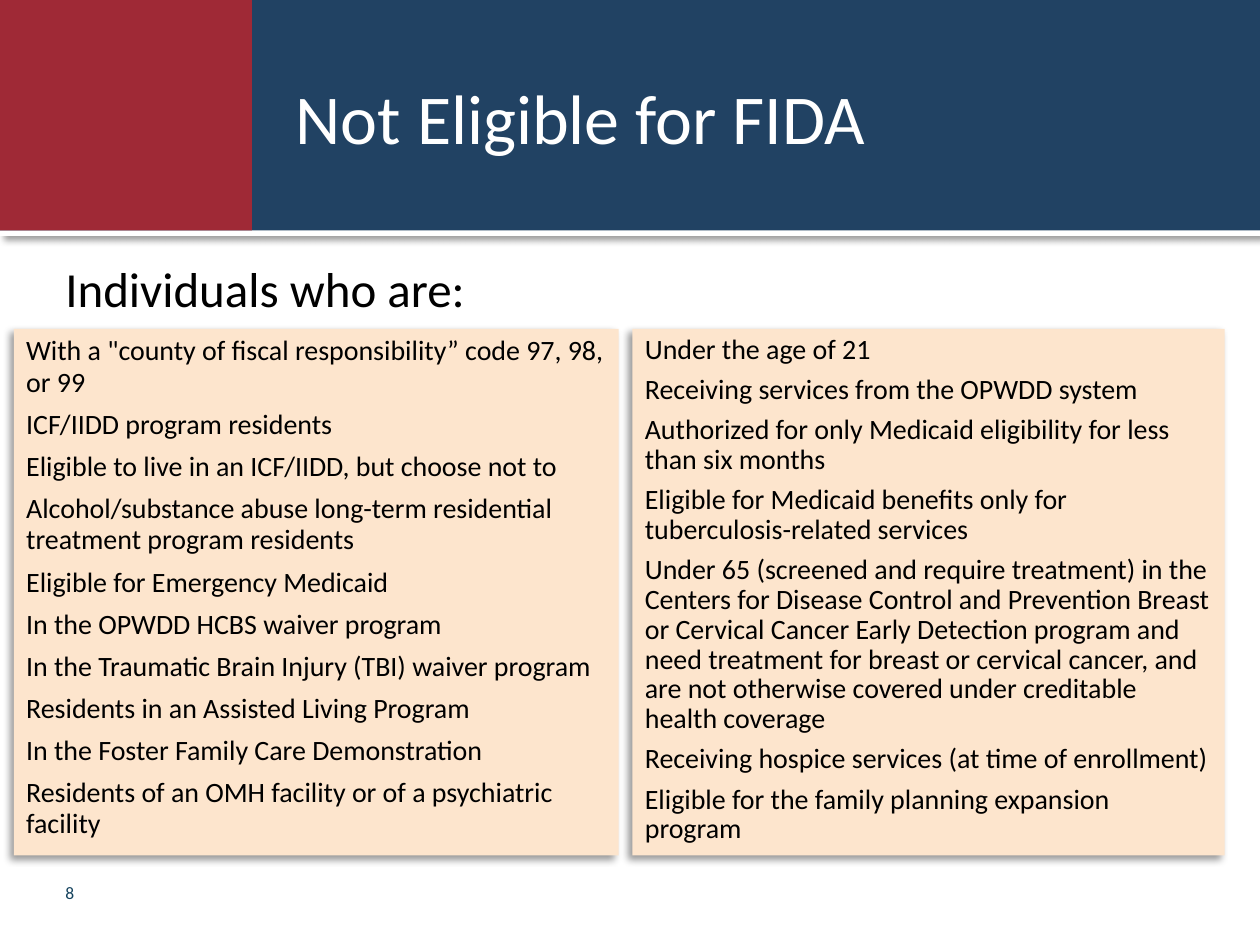
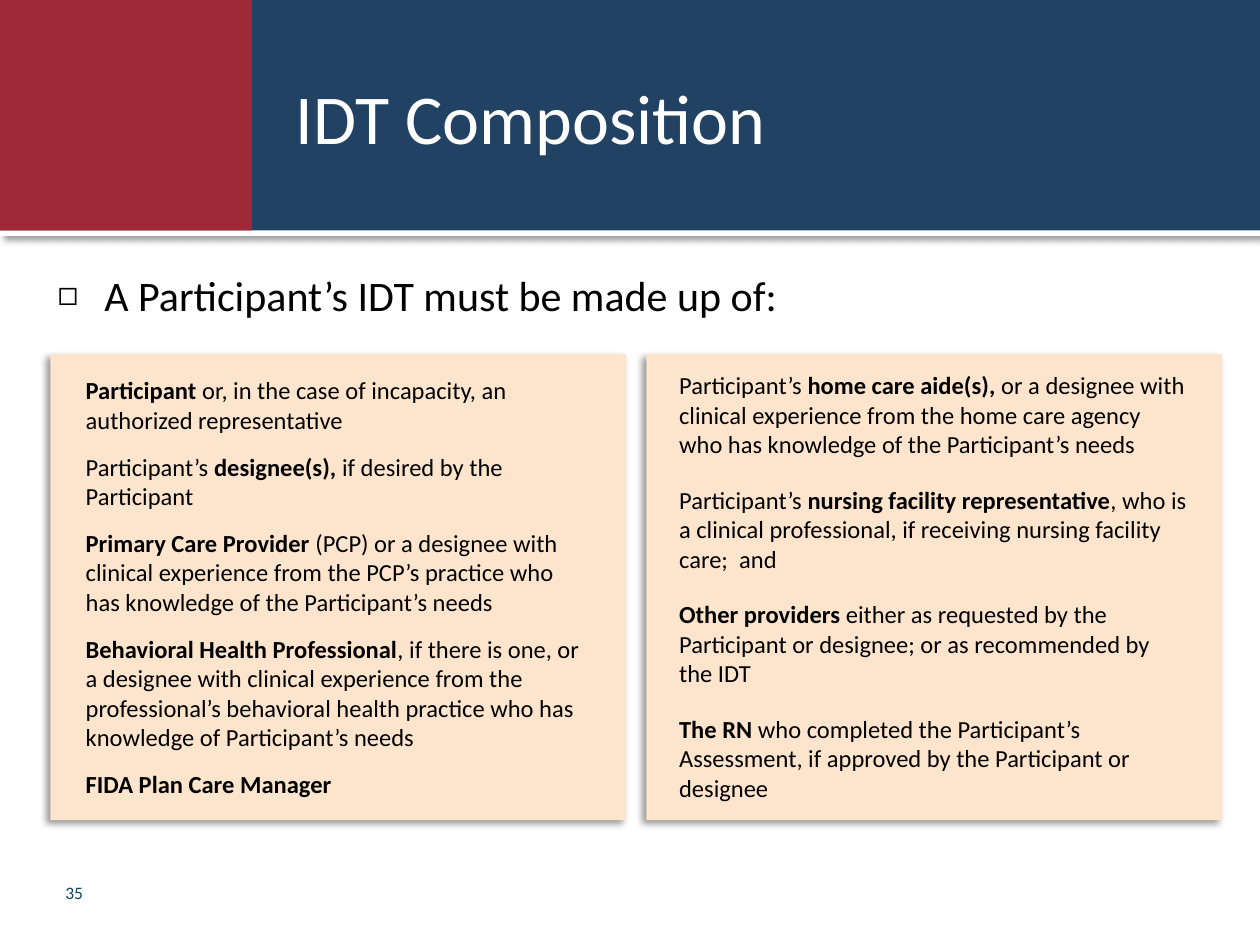
from typing import NamedTuple

from lxml import etree
from pptx import Presentation
from pptx import util as u
from pptx.dml.color import RGBColor
from pptx.enum import shapes, text
from pptx.oxml.ns import qn

COLUMNS, ROWS = 100, 75
CELL = u.Inches(0.1)
FONT = "Calibri"
NAVY, RED, PEACH = "214263", "9F2936", "FDE5CD"
WHITE, BLACK, FOOTER_BLUE = "FFFFFF", "000000", "14425D"


class Box(NamedTuple):
    """A region measured in columns and rows of the slide grid."""
    left: float
    top: float
    width: float
    height: float

    def within(self, left, top, width, height):
        """Return a region placed relative to this one."""
        return Box(self.left + left, self.top + top, width, height)

    def lengths(self):
        """Return the region as slide lengths."""
        return [u.Emu(round(value * CELL)) for value in self]


PAGE = Box(0, 0, COLUMNS, ROWS)
HEADER = Box(0, 0, COLUMNS, 18.3)

NOT_ELIGIBLE_LEFT = [
    'With a "county of fiscal responsibility” code 97, 98, or 99',
    "ICF/IIDD program residents",
    "Eligible to live in an ICF/IIDD, but choose not to",
    "Alcohol/substance abuse long-term residential treatment program residents",
    "Eligible for Emergency Medicaid",
    "In the OPWDD HCBS waiver program",
    "In the Traumatic Brain Injury (TBI) waiver program",
    "Residents in an Assisted Living Program",
    "In the Foster Family Care Demonstration",
    "Residents of an OMH facility or of a psychiatric facility",
]
NOT_ELIGIBLE_RIGHT = [
    "Under the age of 21",
    "Receiving services from the OPWDD system",
    "Authorized for only Medicaid eligibility for less than six months",
    "Eligible for Medicaid benefits only for tuberculosis-related services",
    "Under 65 (screened and require treatment) in the Centers for Disease Control "
    "and Prevention Breast or Cervical Cancer Early Detection program and need "
    "treatment for breast or cervical cancer, and are not otherwise covered under "
    "creditable health coverage",
    "Receiving hospice services (at time of enrollment)",
    "Eligible for the family planning expansion program",
]
TEAM_LEFT = [
    "**Participant **or, in the case of incapacity, an authorized representative",
    "Participant’s **designee(s), **if desired by the Participant",
    "**Primary Care Provider **(PCP) or a designee with clinical experience from "
    "the PCP’s practice who has knowledge of the Participant’s needs",
    "**Behavioral Health Professional**, if there is one, or a designee with "
    "clinical experience from the professional’s behavioral health practice who "
    "has knowledge of Participant’s needs",
    "**FIDA Plan Care Manager**",
]
TEAM_RIGHT = [
    "Participant’s **home care aide(s), **or a designee with clinical experience "
    "from the home care agency who has knowledge of the Participant’s needs",
    "Participant’s **nursing facility representative**, who is a clinical "
    "professional, if receiving nursing facility care;  and",
    "**Other providers **either as requested by the Participant or designee; "
    "or as recommended by the IDT",
    "**The RN **who completed the Participant’s Assessment, if approved by the "
    "Participant or designee",
]


def colour(value):
    """Turn a hex string into a colour."""
    return RGBColor.from_string(value)


def add_shadow(shape, degrees):
    """Give a shape or line a soft grey shadow in the given direction."""
    effects = etree.SubElement(shape._element.spPr, qn("a:effectLst"))
    shadow = etree.SubElement(
        effects, qn("a:outerShdw"), blurRad=str(u.Pt(4)), dist=str(u.Pt(3)),
        dir=str(degrees * 60000), algn="ctr", rotWithShape="0")
    black = etree.SubElement(shadow, qn("a:srgbClr"), val=BLACK)
    etree.SubElement(black, qn("a:alpha"), val="40000")


def add_block(page, box, fill, shadow=False):
    """Draw a plain filled rectangle."""
    block = page.shapes.add_shape(shapes.MSO_SHAPE.RECTANGLE, *box.lengths())
    block.fill.solid()
    block.fill.fore_color.rgb = colour(fill)
    block.line.fill.background()
    if shadow:
        add_shadow(block, 135)
    else:
        block.shadow.inherit = False
    return block


def write(shape, lines, size, hue=BLACK, leading=None, before=0, after=0,
          anchor=text.MSO_ANCHOR.TOP, wrap=True):
    """Fill a shape with paragraphs, with bold between double asterisks."""
    frame = shape.text_frame
    frame.word_wrap = wrap
    frame.vertical_anchor = anchor
    for index, line in enumerate(lines):
        para = frame.add_paragraph() if index else frame.paragraphs[0]
        para.alignment = text.PP_ALIGN.LEFT
        para.line_spacing = leading
        para.space_before, para.space_after = u.Pt(before), u.Pt(after)
        para.font.name, para.font.size = FONT, u.Pt(size)
        para.font.color.rgb = colour(hue)
        for order, words in enumerate(line.split("**")):
            if words:
                span = para.add_run()
                span.text = words
                if order % 2:
                    span.font.bold = True
    return frame


def add_text(page, box, lines, size, **style):
    """Place a text box and write in it."""
    label = page.shapes.add_textbox(*box.lengths())
    return write(label, lines, size, **style)


def add_bullet(para, mark, indent):
    """Hang a small bullet before a paragraph."""
    props = para._p.get_or_add_pPr()
    props.set("marL", str(indent))
    props.set("indent", str(-indent))
    tint = etree.SubElement(props, qn("a:buClr"))
    etree.SubElement(tint, qn("a:srgbClr"), val=BLACK)
    etree.SubElement(props, qn("a:buSzPct"), val="80000")
    etree.SubElement(props, qn("a:buFont"), typeface=FONT)
    etree.SubElement(props, qn("a:buChar"), char=mark)
    for defaults in props.findall(qn("a:defRPr")):
        props.append(defaults)


def add_header(page, box, title):
    """Draw the header band, its rule, the red corner and the title."""
    left, top, width, height = box.lengths()
    rule = page.shapes.add_connector(
        shapes.MSO_CONNECTOR.STRAIGHT, left, top + height, left + width, top + height)
    rule.line.color.rgb = colour(WHITE)
    rule.line.width = u.Pt(6)
    add_shadow(rule, 45)
    add_block(page, box, NAVY)
    add_block(page, box.within(0, 0, box.width / 5, box.height), RED)
    add_text(page, box.within(22.5, 3, 72.5, 12.5), [title], 40, hue=WHITE,
             anchor=text.MSO_ANCHOR.MIDDLE)


def add_page(deck, title, number):
    """Start a slide with the shared header and page number."""
    page = deck.slides.add_slide(deck.slide_layouts[6])
    add_header(page, HEADER, title)
    add_text(page, PAGE.within(4.2, 69.5, 91.7, 4), [number], 10, hue=FOOTER_BLUE)
    return page


def build_not_eligible(deck, body):
    """Build the slide listing who is not eligible."""
    page = add_page(deck, "Not Eligible for FIDA", "8")
    add_text(page, body.within(4.2, 1.7, 34.1, 5.7), ["Individuals who are:"], 28, wrap=False)
    panels = [(1.1, 48, NOT_ELIGIBLE_LEFT, 18), (50.2, 47, NOT_ELIGIBLE_RIGHT, 17)]
    for left, width, lines, leading in panels:
        panel = add_block(page, body.within(left, 7.8, width, 41.8), PEACH, shadow=True)
        write(panel, lines, 16, leading=u.Pt(leading), after=6)


def build_team(deck, body):
    """Build the slide on the members of the team."""
    page = add_page(deck, "IDT Composition", "35")
    intro = add_text(page, body.within(3.6, 1.8, 91.4, 10.6),
                     ["A Participant’s IDT must be made up of:"], 24, leading=1.2, before=6)
    add_bullet(intro.paragraphs[0], "◻", u.Inches(0.37))
    panels = [(4, 0.8, 1.2, 43.1, TEAM_LEFT, 10), (51.3, 0.6, 0.8, 43.3, TEAM_RIGHT, 15)]
    for left, inset, drop, width, lines, gap in panels:
        panel = body.within(left, 9.8, 45.7, 37)
        add_block(page, panel, PEACH, shadow=True)
        frame = add_text(page, panel.within(inset, drop, width, 35), lines, 14, before=gap)
        frame.margin_left = u.Inches(0.2)


def main():
    """Build and save the deck."""
    deck = Presentation()
    deck.slide_width, deck.slide_height = COLUMNS * CELL, ROWS * CELL
    body = PAGE.within(0, HEADER.height, COLUMNS, ROWS - HEADER.height)
    build_not_eligible(deck, body)
    build_team(deck, body)
    deck.save("out.pptx")


if __name__ == "__main__":
    main()
